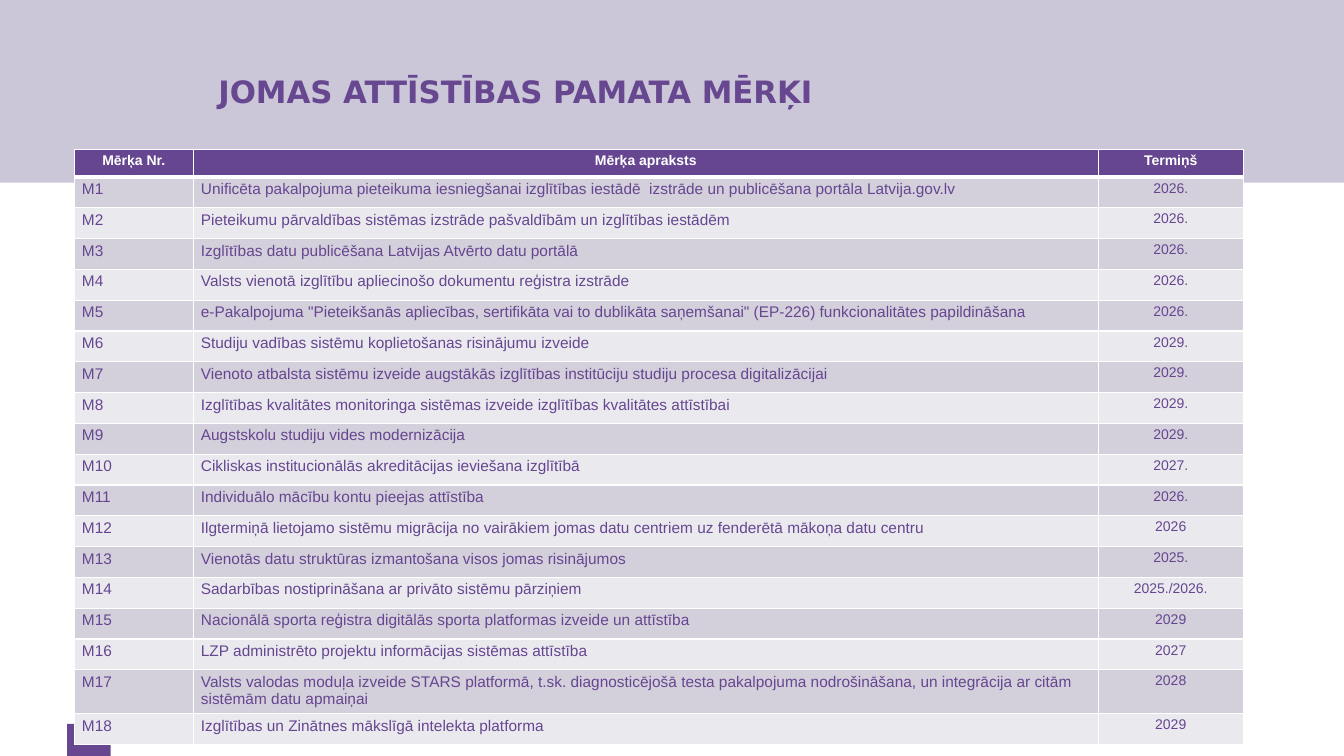
from dataclasses import dataclass

import pptx
import pptx.dml.color
import pptx.enum.shapes
import pptx.enum.text
import pptx.oxml
import pptx.oxml.ns
import pptx.util

PX = 6350  # EMU per px: 1920 x 1080 px fill 13.33 x 7.5 inches

COLOURS = {
    "band": "CBC7D8",
    "accent": "664790",
    "table": "664690",
    "odd": "D3CFDB",
    "even": "EAE9EE",
    "white": "FFFFFF",
}
COLUMN_WIDTHS = (170, 1293, 207)
HEADER_HEIGHT = 40
ROW_HEIGHT = 44
LEFT = pptx.enum.text.PP_ALIGN.LEFT
CENTER = pptx.enum.text.PP_ALIGN.CENTER


@dataclass(frozen=True)
class Block:
    left: int
    top: int
    width: int
    height: int
    colour: str


@dataclass(frozen=True)
class Goal:
    description: str
    term: str


BLOCKS = (
    Block(0, 0, 1920, 261, "band"),
    Block(96, 1034, 62, 46, "accent"),
)
HEADINGS = ("Mērķa Nr.", "Mērķa apraksts", "Termiņš")
GOALS = (
    Goal("Unificēta pakalpojuma pieteikuma iesniegšanai izglītības iestādē  izstrāde un "
         "publicēšana portāla Latvija.gov.lv", "2026."),
    Goal("Pieteikumu pārvaldības sistēmas izstrāde pašvaldībām un izglītības iestādēm", "2026."),
    Goal("Izglītības datu publicēšana Latvijas Atvērto datu portālā", "2026."),
    Goal("Valsts vienotā izglītību apliecinošo dokumentu reģistra izstrāde", "2026."),
    Goal('e-Pakalpojuma "Pieteikšanās apliecības, sertifikāta vai to dublikāta saņemšanai" '
         "(EP-226) funkcionalitātes papildināšana", "2026."),
    Goal("Studiju vadības sistēmu koplietošanas risinājumu izveide", "2029."),
    Goal("Vienoto atbalsta sistēmu izveide augstākās izglītības institūciju studiju procesa "
         "digitalizācijai", "2029."),
    Goal("Izglītības kvalitātes monitoringa sistēmas izveide izglītības kvalitātes attīstībai",
         "2029."),
    Goal("Augstskolu studiju vides modernizācija", "2029."),
    Goal("Cikliskas institucionālās akreditācijas ieviešana izglītībā", "2027."),
    Goal("Individuālo mācību kontu pieejas attīstība", "2026."),
    Goal("Ilgtermiņā lietojamo sistēmu migrācija no vairākiem jomas datu centriem uz "
         "fenderētā mākoņa datu centru", "2026"),
    Goal("Vienotās datu struktūras izmantošana visos jomas risinājumos", "2025."),
    Goal("Sadarbības nostiprināšana ar privāto sistēmu pārziņiem", "2025./2026."),
    Goal("Nacionālā sporta reģistra digitālās sporta platformas izveide un attīstība", "2029"),
    Goal("LZP administrēto projektu informācijas sistēmas attīstība", "2027"),
    Goal("Valsts valodas moduļa izveide STARS platformā, t.sk. diagnosticējošā testa "
         "pakalpojuma nodrošināšana, un integrācija ar citām sistēmām datu apmaiņai", "2028"),
    Goal("Izglītības un Zinātnes mākslīgā intelekta platforma", "2029"),
)


def px(length: int) -> pptx.util.Emu:
    return pptx.util.Emu(length * PX)


def rgb(name: str) -> pptx.dml.color.RGBColor:
    return pptx.dml.color.RGBColor.from_string(COLOURS[name])


def write(frame, text: str, *, size: int, colour: str, font: str = "Arial",
          bold: bool = False, align=LEFT) -> None:
    para = frame.paragraphs[0]
    para.alignment = align
    span = para.add_run()
    span.text = text
    span.font.name = font
    span.font.size = pptx.util.Pt(size)
    span.font.bold = bold
    span.font.color.rgb = rgb(colour)


def set_margins(target, left: int, top: int, right: int, bottom: int) -> None:
    target.margin_left, target.margin_top = px(left), px(top)
    target.margin_right, target.margin_bottom = px(right), px(bottom)


def draw_block(page, block: Block) -> None:
    shape = page.shapes.add_shape(
        pptx.enum.shapes.MSO_SHAPE.RECTANGLE,
        px(block.left), px(block.top), px(block.width), px(block.height))
    shape.shadow.inherit = False
    shape.fill.solid()
    shape.fill.fore_color.rgb = rgb(block.colour)
    shape.line.fill.background()


def draw_title(page, text: str) -> None:
    box = page.shapes.add_textbox(px(312), px(40), px(949), px(180))
    frame = box.text_frame
    frame.word_wrap = True
    frame.vertical_anchor = pptx.enum.text.MSO_ANCHOR.MIDDLE
    set_margins(frame, 0, 7, 14, 7)
    write(frame, text, size=22, colour="accent", font="DejaVu Sans", bold=True)


def style_cell(cell, fill: str, bottom_width: int = 1) -> None:
    set_margins(cell, 11, 5, 11, 5)
    properties = cell._tc.get_or_add_tcPr()
    for side, width in (("L", 1), ("R", 1), ("T", 1), ("B", bottom_width)):
        properties.append(pptx.oxml.parse_xml(
            f'<a:ln{side} {pptx.oxml.ns.nsdecls("a")} w="{pptx.util.Pt(width)}">'
            f'<a:solidFill><a:srgbClr val="{COLOURS["white"]}"/></a:solidFill></a:ln{side}>'))
    cell.fill.solid()
    cell.fill.fore_color.rgb = rgb(fill)


def draw_goals(page) -> None:
    height = HEADER_HEIGHT + ROW_HEIGHT * len(GOALS)
    table = page.shapes.add_table(
        len(GOALS) + 1, len(HEADINGS),
        px(106), px(213), px(sum(COLUMN_WIDTHS)), px(height)).table
    for column, width in zip(table.columns, COLUMN_WIDTHS):
        column.width = px(width)

    # Heading row
    table.rows[0].height = px(HEADER_HEIGHT)
    for cell, heading in zip(table.rows[0].cells, HEADINGS):
        style_cell(cell, "table", bottom_width=3)
        write(cell.text_frame, heading, size=10, colour="white", bold=True, align=CENTER)

    # One row per goal, in alternating shades
    formats = ((11, LEFT), (11, LEFT), (10, CENTER))
    for number, goal in enumerate(GOALS, start=1):
        row = table.rows[number]
        row.height = px(ROW_HEIGHT)
        texts = (f"M{number}", goal.description, goal.term)
        for cell, text, (size, align) in zip(row.cells, texts, formats):
            style_cell(cell, "odd" if number % 2 else "even")
            write(cell.text_frame, text, size=size, colour="table", align=align)


def main() -> None:
    deck = pptx.Presentation()
    deck.slide_width, deck.slide_height = px(1920), px(1080)
    page = deck.slides.add_slide(deck.slide_layouts[6])
    for block in BLOCKS:
        draw_block(page, block)
    draw_title(page, "JOMAS ATTĪSTĪBAS PAMATA MĒRĶI")
    draw_goals(page)
    deck.save("out.pptx")


if __name__ == "__main__":
    main()
